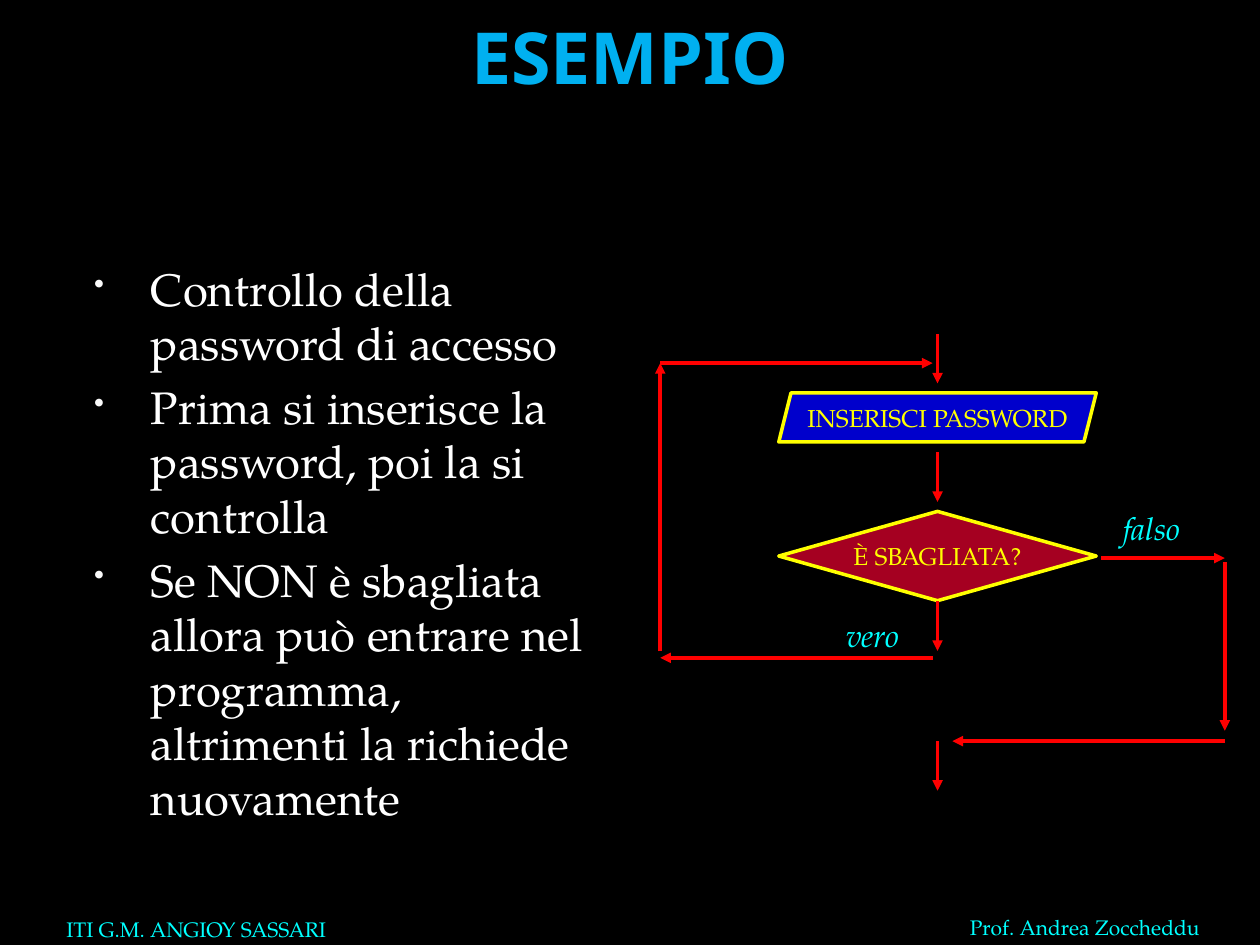
from dataclasses import dataclass
from lxml.etree import SubElement as Sub
from pptx import Presentation
from pptx.dml.color import RGBColor as RGB
from pptx.enum.shapes import MSO_CONNECTOR as Link, MSO_SHAPE as Kind
from pptx.enum.text import MSO_ANCHOR as Anchor, MSO_AUTO_SIZE as Fit, PP_ALIGN as Align
from pptx.oxml.ns import qn
from pptx.util import Cm, Pt


@dataclass(frozen=True)
class Theme:
    back: str = "000000"
    title: str = "00B0F0"
    body: str = "FFFFFF"
    dot: str = "F9F9F9"
    note: str = "00FFFF"
    arrow: str = "FF0000"
    edge: str = "FFFF00"
    input: str = "0000CC"
    test: str = "A50021"
    head: str = "Noto Sans"
    text: str = "TeX Gyre Pagella"
    big: int = 41
    main: int = 26
    label: int = 18
    node: int = 14
    foot: int = 12
    line: int = 2


T = Theme()
LEFT, MID, RIGHT = 13.31, 18.9, 24.69
TOP, BACK, JOIN = 7.32, 13.26, 14.94
STEP = 1


def place(shape, x, y, w, h):
    shape.left, shape.top, shape.width, shape.height = Cm(x), Cm(y), Cm(w), Cm(h)


def style(para, size, color, name=T.text, bold=False, italic=False):
    font = para.font
    font.name, font.size, font.bold, font.italic = name, Pt(size), bold, italic
    font.color.rgb = RGB.from_string(color)


def center(frame, text, size, color, italic=False):
    frame.margin_left = frame.margin_right = frame.margin_top = frame.margin_bottom = 0
    frame.word_wrap = False
    frame.vertical_anchor = Anchor.MIDDLE
    para = frame.paragraphs[0]
    para.text, para.alignment = text, Align.CENTER
    style(para, size, color, italic=italic)


def title(slide, text):
    shape = slide.shapes.title
    place(shape, 1.27, 0.13, 22.86, 3.18)
    frame = shape.text_frame
    frame.text = text
    frame.auto_size, frame.vertical_anchor = Fit.NONE, Anchor.TOP
    para = frame.paragraphs[0]
    para.alignment = Align.CENTER
    style(para, T.big, T.title, T.head, bold=True)


def bullet(para):
    props = para._p.get_or_add_pPr()
    props.set("marL", str(Cm(1.52)))
    props.set("indent", str(-Cm(1.14)))
    Sub(Sub(props, qn("a:buClr")), qn("a:srgbClr"), val=T.dot)
    Sub(props, qn("a:buSzPct"), val="65000")
    Sub(props, qn("a:buChar"), char="•")


def points(slide, items):
    frame = slide.shapes.add_textbox(Cm(1.27), Cm(5.13), Cm(11.23), Cm(12.57)).text_frame
    frame.word_wrap = True
    for i, item in enumerate(items):
        para = frame.add_paragraph() if i else frame.paragraphs[0]
        para.text = item
        bullet(para)
        if i:
            para.space_before = Pt(T.main * 0.2)
        style(para, T.main, T.body)


def footer(slide, text, x, y, w, h, anchor, wrap):
    frame = slide.shapes.add_textbox(Cm(x), Cm(y), Cm(w), Cm(h)).text_frame
    frame.word_wrap, frame.vertical_anchor = wrap, anchor
    frame.text = text
    style(frame.paragraphs[0], T.foot, T.note)


def node(slide, kind, text, y, h, fill):
    w = 6.4
    shape = slide.shapes.add_shape(kind, Cm(MID - w / 2), Cm(y), Cm(w), Cm(h))
    shape.shadow.inherit = False
    shape.fill.solid()
    shape.fill.fore_color.rgb = RGB.from_string(fill)
    shape.line.color.rgb = RGB.from_string(T.edge)
    shape.line.width = Pt(T.line)
    center(shape.text_frame, text, T.node, T.edge)


def label(slide, text, x, y):
    box = slide.shapes.add_textbox(Cm(x), Cm(y), Cm(1.78), Cm(1.02))
    center(box.text_frame, text, T.label, T.note, italic=True)


def arrow(slide, *ends):
    link = slide.shapes.add_connector(Link.STRAIGHT, *map(Cm, ends))
    link.line.color.rgb = RGB.from_string(T.arrow)
    link.line.width = Pt(T.line)
    Sub(link.line._get_or_add_ln(), qn("a:tailEnd"), type="triangle")
    Sub(link._element.spPr, qn("a:effectLst"))


def flow(slide):
    node(slide, Kind.PARALLELOGRAM, "INSERISCI PASSWORD", 7.92, 0.99, T.input)
    node(slide, Kind.DIAMOND, "È SBAGLIATA?", 10.31, 1.8, T.test)
    for y in (6.73, 9.12, 12.12, JOIN):
        arrow(slide, MID, y, MID, y + STEP)
    arrow(slide, MID - 0.1, BACK, LEFT, BACK)
    arrow(slide, LEFT, BACK - 0.13, LEFT, TOP)
    arrow(slide, LEFT, TOP, MID - 0.1, TOP)
    arrow(slide, 22.2, 11.25, RIGHT, 11.25)
    arrow(slide, RIGHT, 11.33, RIGHT, 14.73)
    arrow(slide, RIGHT, JOIN, MID + 0.3, JOIN)
    label(slide, "vero", 16.71, 12.29)
    label(slide, "falso", 22.33, 10.13)


def main():
    deck = Presentation()
    deck.slide_width, deck.slide_height = Cm(25.4), Cm(19.05)
    slide = deck.slides.add_slide(deck.slide_layouts[5])
    slide.background.fill.solid()
    slide.background.fill.fore_color.rgb = RGB.from_string(T.back)
    footer(slide, "Prof. Andrea Zoccheddu", 19.3, 18.31, 5.21, 0.76, Anchor.TOP, False)
    footer(slide, "ITI G.M. ANGIOY SASSARI", 1.09, 18.08, 8.05, 1.02, Anchor.BOTTOM, True)
    title(slide, "ESEMPIO")
    points(slide, (
        "Controllo della password di accesso",
        "Prima si inserisce la password, poi la si controlla",
        "Se NON è sbagliata allora può entrare nel programma, altrimenti la richiede nuovamente",
    ))
    flow(slide)
    deck.save("out.pptx")


if __name__ == "__main__":
    main()
